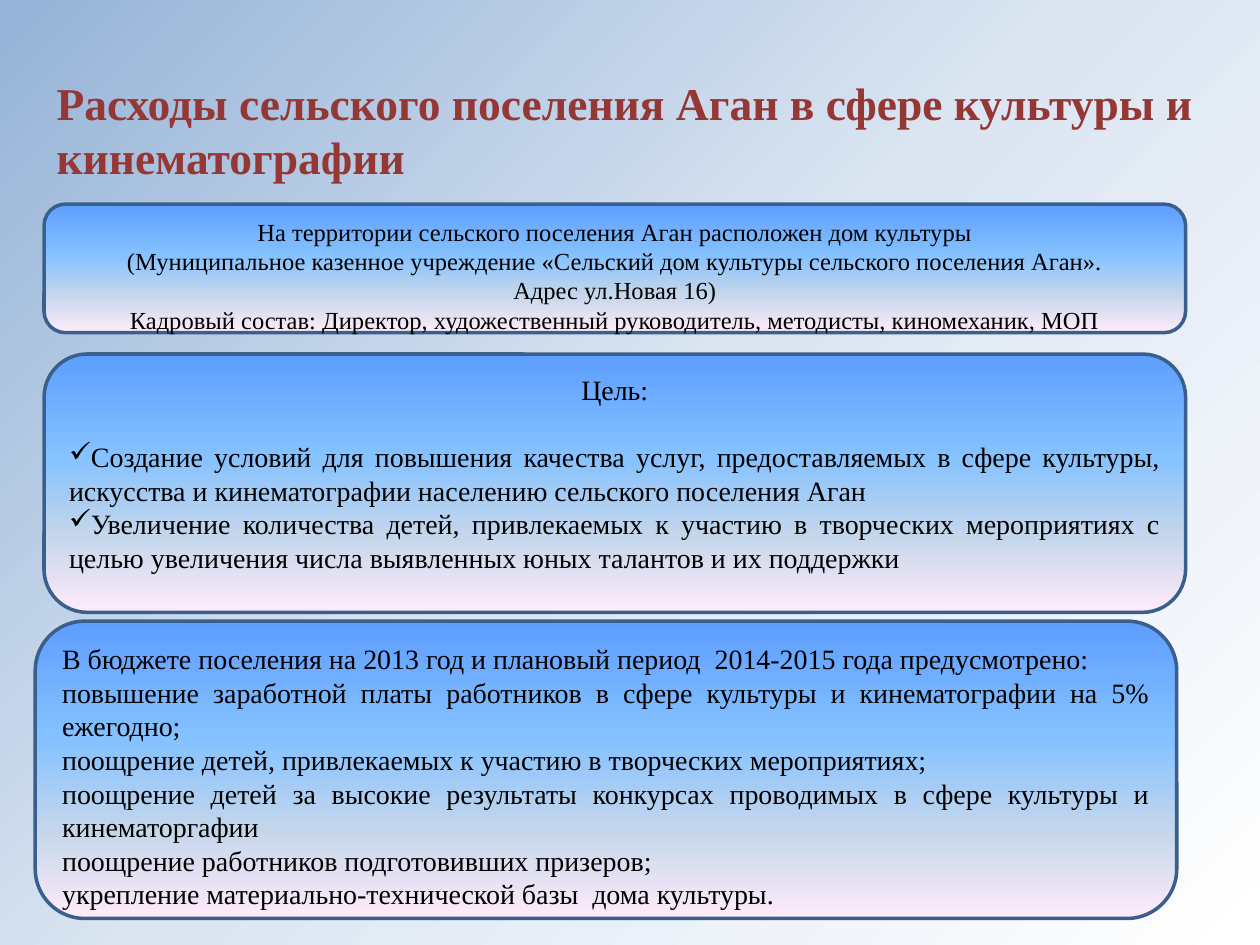
from lxml import etree
from pptx import Presentation
from pptx import util as u
from pptx.dml.color import RGBColor
from pptx.enum import shapes, text
from pptx.oxml.ns import qn

ALIGN = text.PP_ALIGN
BOX_STOPS = [(0, "5E9EFF"), (40, "85C2FF"), (70, "C4D6EB"), (100, "FFEBFA")]
BACKGROUND_STOPS = [(0, "FFFFFF"), (50, "DCE6F2"), (100, "95B3D7")]


def set_gradient(fill, owner, stops, radial=False):
    """Fill with (percent, colour) stops, top to bottom or from the lower right corner."""
    fill.gradient()
    gradient = next(owner.iter(qn("a:gradFill")))
    for child in list(gradient):
        gradient.remove(child)
    stop_list = etree.SubElement(gradient, qn("a:gsLst"))
    for percent, color in stops:
        stop = etree.SubElement(stop_list, qn("a:gs"), pos=str(percent * 1000))
        etree.SubElement(stop, qn("a:srgbClr"), val=color)
    if radial:
        shade = etree.SubElement(gradient, qn("a:path"), path="circle")
        etree.SubElement(shade, qn("a:fillToRect"), l="100000", t="100000")
    else:
        etree.SubElement(gradient, qn("a:lin"), ang="5400000", scaled="0")


def add_text(frame, content, size, color="000000", bold=False,
             align=ALIGN.LEFT, bullet=None, space_after=0):
    paragraph = frame.paragraphs[0]
    if paragraph.runs:
        paragraph = frame.add_paragraph()
    paragraph.alignment = align
    paragraph.space_after = u.Pt(space_after)
    if bullet:
        properties = paragraph._p.get_or_add_pPr()
        etree.SubElement(properties, qn("a:buChar"), char=bullet)
    run = paragraph.add_run()
    run.text = content
    run.font.name = "Times New Roman"
    run.font.size = u.Pt(size)
    run.font.bold = bold
    run.font.color.rgb = RGBColor.from_string(color)


presentation = Presentation()
presentation.slide_width = u.Inches(10)
presentation.slide_height = u.Inches(7.5)
slide = presentation.slides.add_slide(presentation.slide_layouts[6])
set_gradient(slide.background.fill, slide._element, BACKGROUND_STOPS, radial=True)

title = slide.shapes.add_textbox(u.Inches(0.35), u.Inches(0.36), u.Inches(9.65), u.Inches(1.15))
title.text_frame.word_wrap = True
title.text_frame.vertical_anchor = text.MSO_ANCHOR.BOTTOM
add_text(title.text_frame, "Расходы сельского поселения Аган в сфере культуры и кинематографии",
         26, color="953735", bold=True)

centered = {"align": ALIGN.CENTER}
justified = {"align": ALIGN.JUSTIFY}
checked = {"align": ALIGN.JUSTIFY, "bullet": "✓"}

# left, top, height, text size, paragraphs with their format
boxes = [
    (0.35, 1.62, 1.02, 14, [
        ("На территории сельского поселения Аган расположен дом культуры", centered),
        ("(Муниципальное казенное учреждение «Сельский дом культуры сельского поселения Аган».",
         centered),
        ("Адрес ул.Новая 16)", centered),
        ("Кадровый состав: Директор, художественный руководитель, методисты, киномеханик, МОП",
         centered),
    ]),
    (0.35, 2.81, 2.05, 16, [
        ("Цель:", {"align": ALIGN.CENTER, "space_after": 19}),
        ("Создание условий для повышения качества услуг, предоставляемых в сфере культуры, "
         "искусства и кинематографии населению сельского поселения Аган", checked),
        ("Увеличение количества детей, привлекаемых к участию в творческих мероприятиях с целью "
         "увеличения числа выявленных юных талантов и их поддержки", checked),
    ]),
    (0.28, 4.93, 2.36, 16, [
        ("В бюджете поселения на 2013 год и плановый период  2014-2015 года предусмотрено:",
         justified),
        ("повышение заработной платы работников в сфере культуры и кинематографии на 5% ежегодно;",
         justified),
        ("поощрение детей, привлекаемых к участию в творческих мероприятиях;", justified),
        ("поощрение детей за высокие результаты конкурсах проводимых в сфере культуры и "
         "кинематоргафии", justified),
        ("поощрение работников подготовивших призеров;", justified),
        ("укрепление материально-технической базы  дома культуры.", justified),
    ]),
]

for left, top, height, size, paragraphs in boxes:
    box = slide.shapes.add_shape(shapes.MSO_SHAPE.ROUNDED_RECTANGLE, u.Inches(left),
                                 u.Inches(top), u.Inches(9.06), u.Inches(height))
    box.shadow.inherit = False
    set_gradient(box.fill, box._element, BOX_STOPS)
    box.line.color.rgb = RGBColor.from_string("3A5F8C")
    box.line.width = u.Pt(2)
    box.text_frame.word_wrap = True
    box.text_frame.vertical_anchor = text.MSO_ANCHOR.TOP
    for content, style in paragraphs:
        add_text(box.text_frame, content, size, **style)

presentation.save("out.pptx")
